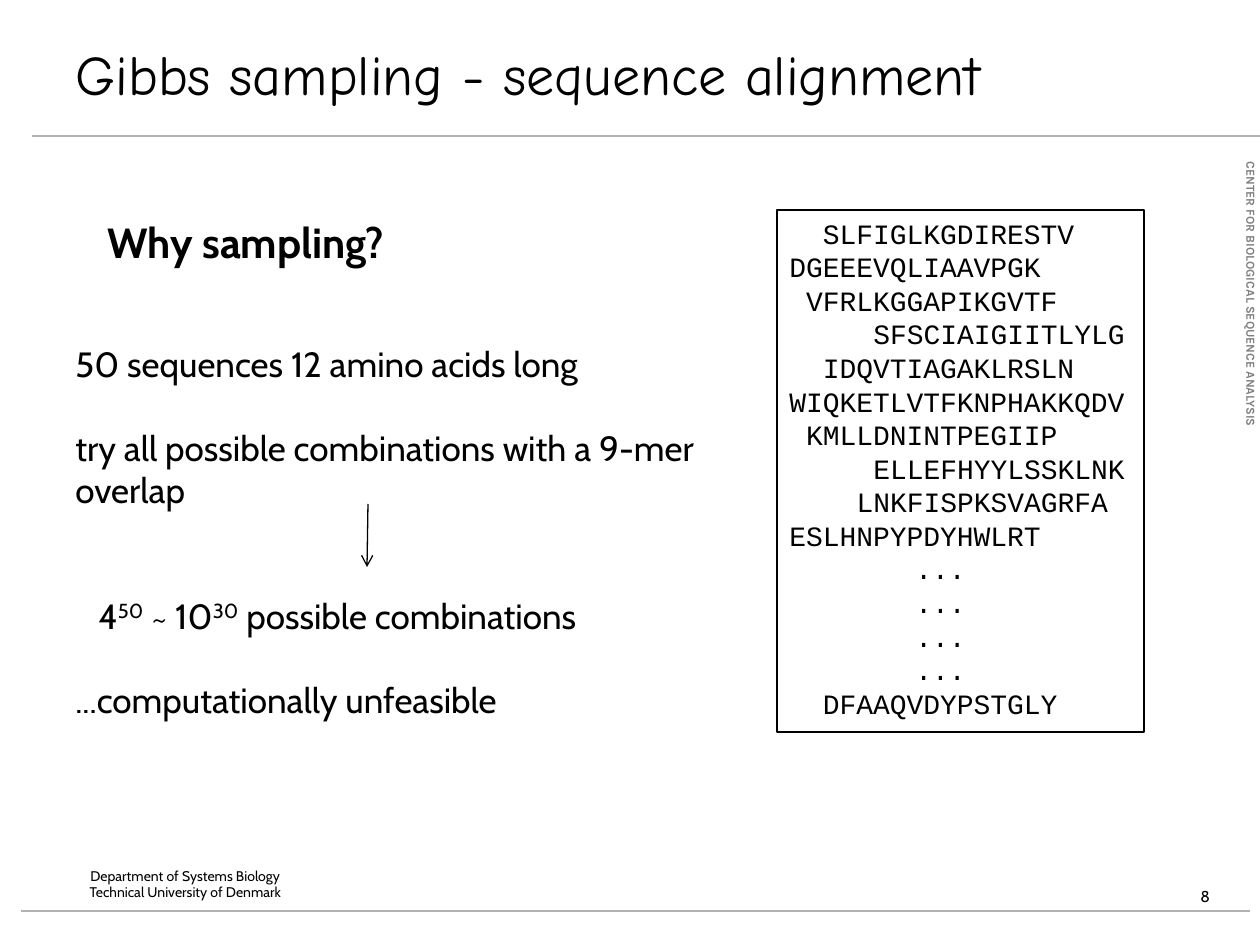
from lxml import etree
from pptx import Presentation
from pptx.dml.color import RGBColor
from pptx.enum.shapes import MSO_CONNECTOR as Conn, MSO_SHAPE as Shape
from pptx.enum.text import MSO_ANCHOR as Anchor, MSO_AUTO_SIZE as Auto, PP_ALIGN as Align
from pptx.oxml.ns import qn
from pptx.util import Emu, Pt

BLACK = RGBColor(0, 0, 0)
WHITE = RGBColor(255, 255, 255)
GRAY = RGBColor(0x80, 0x80, 0x80)
RULE = RGBColor(0xB2, 0xB2, 0xB2)
PX = 914400 / 126


def fill_text(shape, rows, size, face, color=BLACK, bold=False, wrap=True,
              align=Align.LEFT):
    """Write rows of (indent px, space before pt, [(text, raised)])."""
    frame = shape.text_frame
    frame.word_wrap = wrap
    frame.auto_size = Auto.SHAPE_TO_FIT_TEXT
    for i, (indent, gap, runs) in enumerate(rows):
        para = frame.add_paragraph() if i else frame.paragraphs[0]
        para.alignment = align
        if indent:
            props = para._p.get_or_add_pPr()
            props.set("marL", str(round(indent * PX)))
            props.set("indent", "0")
        if gap:
            para.space_before = Pt(gap)
        for text, raised in runs:
            run = para.add_run()
            run.text = text
            if raised:
                run._r.get_or_add_rPr().set("baseline", "30000")
        font = para.font
        font.size, font.name, font.bold = Pt(size), face, bold
        font.color.rgb = color
    return frame


def add_line(ends, color, width):
    line = slide.shapes.add_connector(Conn.STRAIGHT, *[Emu(round(v * PX)) for v in ends])
    line.line.color.rgb = color
    line.line.width = Pt(width)
    etree.SubElement(line._element.spPr, qn("a:effectLst"))
    return line


prs = Presentation()
prs.slide_width, prs.slide_height = Emu(round(1260 * PX)), Emu(round(945 * PX))
slide = prs.slides.add_slide(prs.slide_layouts[6])

# Rules across the top and bottom
for ends in ((32, 136, 1260, 136), (21, 911, 1250, 911)):
    add_line(ends, RULE, 1.5)

# Plain text boxes: place, lines, look
labels = [
    ((1056, 343, 389, 18), ["CENTER FOR BIOLOGICAL SEQUENCE ANALYSIS"],
     dict(size=7, face="Karla", color=GRAY, bold=True)),
    ((53, 861, 265, 63), ["Department of Systems Biology", "Technical University of Denmark"],
     dict(size=8, face="Cabin", align=Align.CENTER)),
    ((1188, 881, 49, 32), ["8"], dict(size=9, face="Cabin", wrap=False)),
    ((95, 210, 350, 64), ["Why sampling?"],
     dict(size=24, face="Cabin", bold=True, wrap=False)),
]
for place, lines, look in labels:
    box = slide.shapes.add_textbox(*[Emu(round(v * PX)) for v in place])
    frame = fill_text(box, [(0, 0, [(line, False)]) for line in lines], **look)
    if look["face"] == "Karla":
        box.rotation = 90
        frame.margin_left = frame.margin_right = Emu(round(4 * PX))
        frame.margin_top = frame.margin_bottom = Emu(round(PX))

# Title
title = slide.shapes.add_shape(Shape.RECTANGLE, *[Emu(round(v * PX)) for v in (63, 42, 1008, 63)])
title.shadow.inherit = False
title.fill.solid()
title.fill.fore_color.rgb = WHITE
title.line.color.rgb = WHITE
title.line.width = Pt(0.75)
frame = fill_text(title, [(0, 0, [("Gibbs sampling - sequence alignment", False)])],
                  32, "Comic Neue")
frame.auto_size = Auto.NONE
frame.vertical_anchor = Anchor.MIDDLE

# Peptides, each shifted by a number of letters
CHAR = 16.8
DOTS = (7.5, "...")
peptides = [
    (2, "SLFIGLKGDIRESTV"), (0, "DGEEEVQLIAAVPGK"), (1, "VFRLKGGAPIKGVTF"),
    (5, "SFSCIAIGIITLYLG"), (2, "IDQVTIAGAKLRSLN"), (0, "WIQKETLVTFKNPHAKKQDV"),
    (1, "KMLLDNINTPEGIIP"), (5, "ELLEFHYYLSSKLNK"), (4, "LNKFISPKSVAGRFA"),
    (0, "ESLHNPYPDYHWLRT"), *[DOTS] * 4, (2, "DFAAQVDYPSTGLY"),
]
panel = slide.shapes.add_shape(Shape.RECTANGLE, *[Emu(round(v * PX)) for v in (777, 210, 367, 522)])
panel.shadow.inherit = False
panel.fill.background()
panel.line.color.rgb = BLACK
panel.line.width = Pt(0.75)
frame = fill_text(panel, [(shift * CHAR, 0, [(seq, False)]) for shift, seq in peptides],
                  16, "Courier New", wrap=False)
frame.vertical_anchor = Anchor.TOP

# Argument
body = slide.shapes.add_textbox(*[Emu(round(v * PX)) for v in (63, 336, 683, 394)])
fill_text(body, [
    (0, 0, [("50 sequences 12 amino acids long", False)]),
    (0, 24, [("try all possible combinations with a 9-mer overlap", False)]),
    (23, 48, [("4", False), ("50", True), (" ~ 10", False), ("30", True),
              (" possible combinations", False)]),
    (0, 24, [("...computationally unfeasible", False)]),
], 20, "Cabin")

arrow = add_line((368, 504, 367, 567), BLACK, 0.75)
etree.SubElement(arrow.line._get_or_add_ln(), qn("a:tailEnd"), type="arrow")

prs.save("out.pptx")
